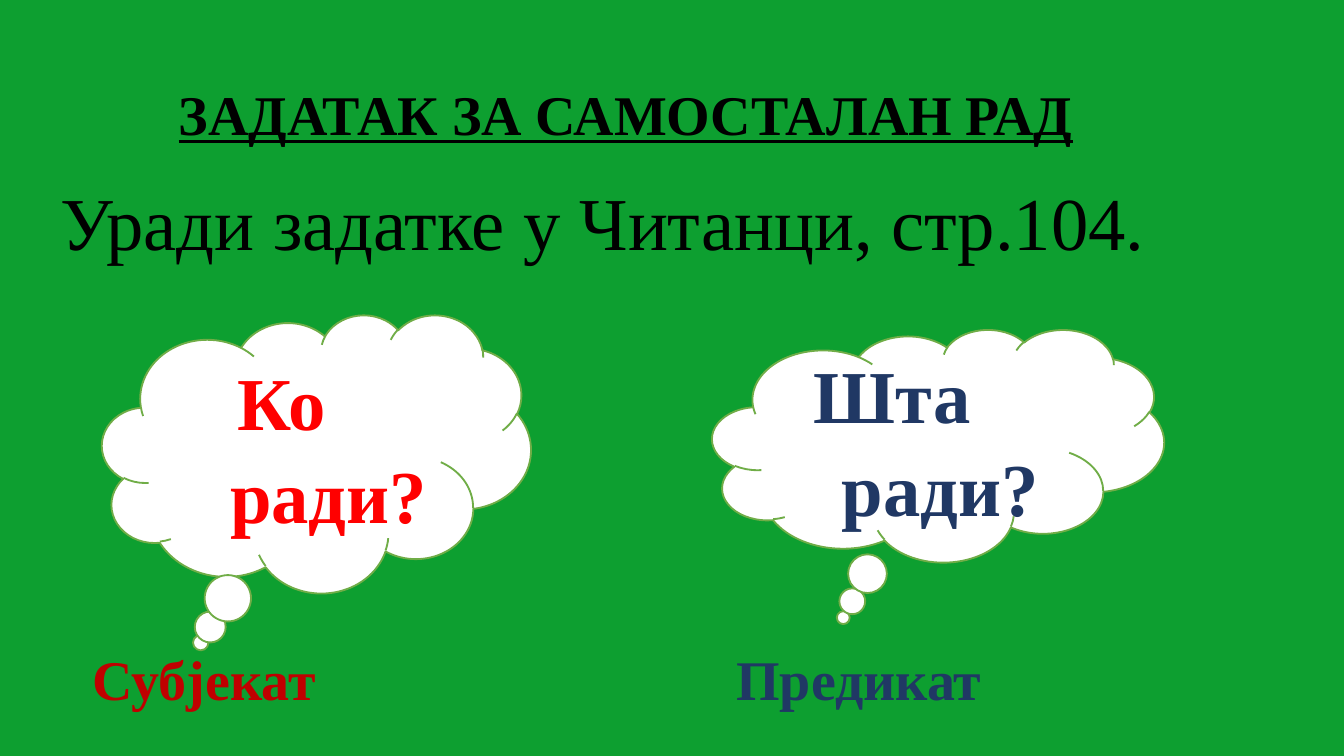
from pptx import Presentation
from pptx.dml.color import RGBColor
from pptx.enum.shapes import MSO_SHAPE
from pptx.enum.text import MSO_ANCHOR, MSO_AUTO_SIZE, PP_ALIGN
from pptx.util import Pt

COLORS = {
    "green": "0D9F30",
    "black": "000000",
    "white": "FFFFFF",
    "outline": "70AD47",
    "navy": "203864",
    "red": "FF0000",
    "dark_red": "C00000",
}


def add_span(para, text, size, color, bold=True):
    para.alignment = PP_ALIGN.LEFT
    span = para.add_run()
    span.text = text
    span.font.name = "Times New Roman"
    span.font.size = Pt(size)
    span.font.bold = bold
    span.font.color.rgb = RGBColor.from_string(COLORS[color])
    return span


deck = Presentation()
deck.slide_width, deck.slide_height = Pt(720), Pt(405)
page = deck.slides.add_slide(deck.slide_layouts[5])
page.background.fill.solid()
page.background.fill.fore_color.rgb = RGBColor.from_string(COLORS["green"])

title = page.shapes.title
title.left, title.top, title.width, title.height = Pt(88.5), Pt(39), Pt(574.5), Pt(44)
title.text_frame.auto_size = MSO_AUTO_SIZE.NONE
title.text_frame.vertical_anchor = MSO_ANCHOR.TOP
heading = add_span(title.text_frame.paragraphs[0], "ЗАДАТАК ЗА САМОСТАЛАН РАД", 30, "black")
heading.font.underline = True

labels = [
    ("Уради задатке у Читанци, стр.104.", 25.2, 90.7, 609, 55.5, 40, "black", False),
    ("Субјекат", 42.5, 342, 260.5, 44, 30, "dark_red", True),
    ("Предикат", 387.4, 342, 270.5, 44, 30, "navy", True),
]
for text, left, top, width, height, size, color, bold in labels:
    box = page.shapes.add_textbox(Pt(left), Pt(top), Pt(width), Pt(height))
    box.text_frame.word_wrap = True
    add_span(box.text_frame.paragraphs[0], text, size, color, bold)

clouds = [
    (381.6, 176.4, 242, 124.6, (-0.21, 0.74), "navy", [("Шта", 21), ("ради?", 36)]),
    (54.7, 168.5, 229.7, 149, (-0.27, 0.68), "red", [("Ко", 41), ("ради?", 37)]),
]
for left, top, width, height, tail, color, lines in clouds:
    cloud = page.shapes.add_shape(
        MSO_SHAPE.CLOUD_CALLOUT, Pt(left), Pt(top), Pt(width), Pt(height)
    )
    cloud.shadow.inherit = False
    cloud.adjustments[0], cloud.adjustments[1] = tail
    cloud.fill.solid()
    cloud.fill.fore_color.rgb = RGBColor.from_string(COLORS["white"])
    cloud.line.color.rgb = RGBColor.from_string(COLORS["outline"])
    cloud.line.width = Pt(1)
    frame = cloud.text_frame
    frame.word_wrap = True
    frame.vertical_anchor = MSO_ANCHOR.MIDDLE
    frame.margin_left = frame.margin_right = 0
    for index, (text, indent) in enumerate(lines):
        para = frame.add_paragraph() if index else frame.paragraphs[0]
        para.space_before = Pt(2 * index)
        para._p.get_or_add_pPr().set("marL", str(Pt(indent)))
        add_span(para, text, 40, color)

deck.save("out.pptx")
